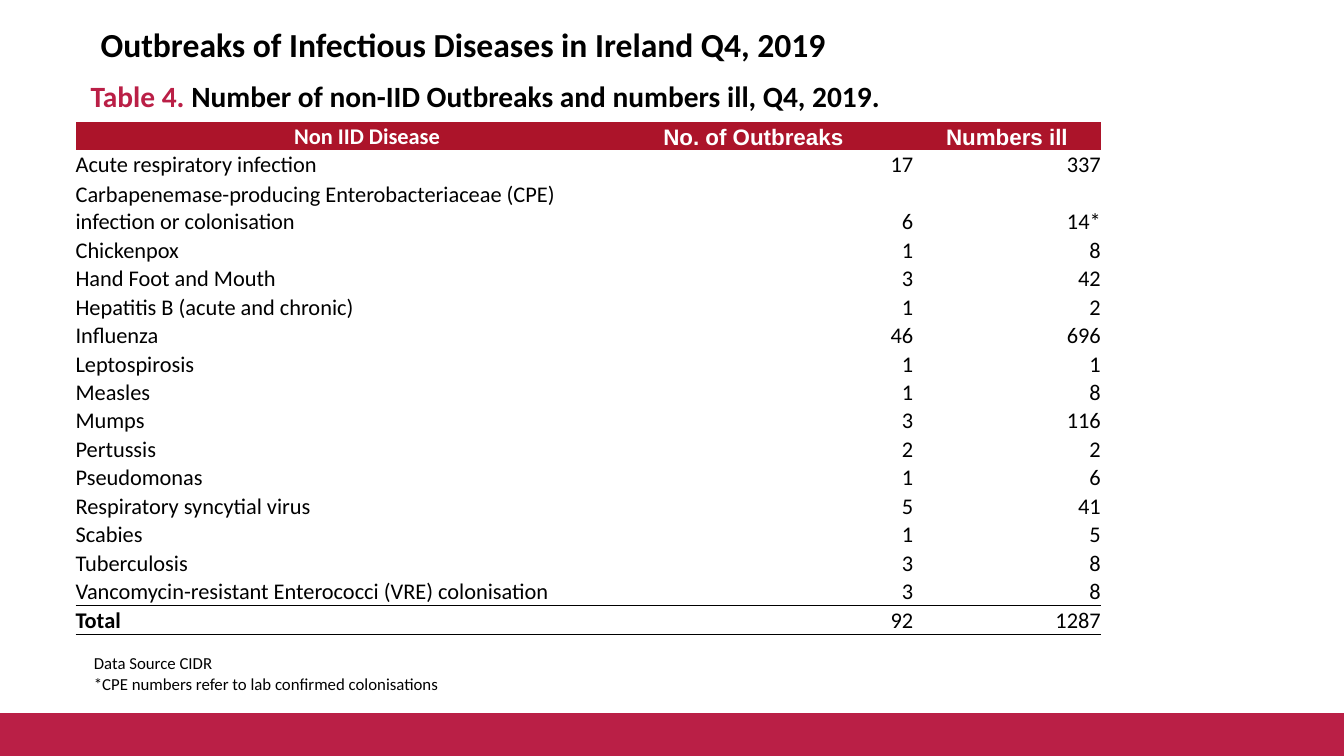
from dataclasses import dataclass

from lxml.etree import SubElement
from pptx import Presentation
from pptx.dml.color import RGBColor
from pptx.enum.shapes import MSO_SHAPE as Preset
from pptx.enum.text import MSO_ANCHOR as Anchor, PP_ALIGN as Align
from pptx.oxml.ns import qn
from pptx.util import Inches, Pt

COLORS = {"crimson": "BA1F46", "header": "AC142A", "ink": "000000", "paper": "FFFFFF"}

# Grid of 160 columns by 90 rows
presentation = Presentation()
presentation.slide_width, presentation.slide_height = Inches(13.33), Inches(7.5)
COLUMN = presentation.slide_width / 160
ROW = presentation.slide_height / 90


@dataclass
class Area:
    left: float
    top: float
    width: float
    height: float

    def lengths(self) -> tuple[int, int, int, int]:
        return (round(self.left * COLUMN), round(self.top * ROW),
                round(self.width * COLUMN), round(self.height * ROW))


@dataclass
class Span:
    text: str
    color: str = "ink"


@dataclass
class TextBlock:
    area: Area
    size: float
    bold: bool
    lines: list[list[Span]]


@dataclass
class Heading:
    text: str
    font: str
    left_gap: float = 0
    right_gap: float = 0


@dataclass
class Disease:
    name: str
    outbreaks: int
    ill: str
    height: int = 1


BAND = Area(0, 85, 160, 5)
TABLE = Area(9, 14.52, 122.04, 61.02)
TABLE_COLUMNS = (62.4, 37.32, 22.32)
LINE_ROWS = 3.39

SOURCE = TextBlock(Area(10, 77.16, 131, 8), 12, False, [
    [Span("Data Source CIDR")],
    [Span("*CPE numbers refer to lab confirmed colonisations")]])
TITLE = TextBlock(Area(10.8, 2.28, 104.2, 6), 24, True, [
    [Span("Outbreaks of Infectious Diseases in Ireland Q4, 2019")]])
CAPTION = TextBlock(Area(9.6, 8.76, 122, 9.72), 21, True, [
    [Span("Table 4. ", "crimson"),
     Span("Number of non-IID Outbreaks and numbers ill, Q4, 2019.")]])

HEADINGS = [Heading("Non IID Disease", "Calibri", left_gap=7),
            Heading("No. of Outbreaks", "Arial", right_gap=0.74),
            Heading("Numbers ill", "Arial")]
DISEASES = [
    Disease("Acute respiratory infection", 17, "337"),
    Disease("Carbapenemase-producing Enterobacteriaceae (CPE) infection or colonisation",
            6, "14*", height=2),
    Disease("Chickenpox", 1, "8"),
    Disease("Hand Foot and Mouth", 3, "42"),
    Disease("Hepatitis B (acute and chronic)", 1, "2"),
    Disease("Influenza", 46, "696"),
    Disease("Leptospirosis", 1, "1"),
    Disease("Measles", 1, "8"),
    Disease("Mumps", 3, "116"),
    Disease("Pertussis", 2, "2"),
    Disease("Pseudomonas", 1, "6"),
    Disease("Respiratory syncytial virus", 5, "41"),
    Disease("Scabies", 1, "5"),
    Disease("Tuberculosis", 3, "8"),
    Disease("Vancomycin-resistant Enterococci (VRE) colonisation", 3, "8"),
    Disease("Total", 92, "1287"),
]


def rgb(name: str) -> RGBColor:
    return RGBColor.from_string(COLORS[name])


def style(font, size: float, color: str, bold: bool, name: str = "Calibri") -> None:
    font.name, font.size, font.bold = name, Pt(size), bold
    font.color.rgb = rgb(color)


def draw_band(slide) -> None:
    shape = slide.shapes.add_shape(Preset.RECTANGLE, *BAND.lengths())
    shape.shadow.inherit = False
    shape.fill.solid()
    shape.fill.fore_color.rgb = rgb("crimson")
    shape.line.color.rgb = rgb("crimson")
    shape.line.width = Pt(2)


def draw_text(slide, block: TextBlock) -> None:
    text_frame = slide.shapes.add_textbox(*block.area.lengths()).text_frame
    text_frame.word_wrap = True
    text_frame.text = "\n".join([""] * len(block.lines))
    for paragraph, spans in zip(text_frame.paragraphs, block.lines):
        for span in spans:
            run = paragraph.add_run()
            run.text = span.text
            style(run.font, block.size, span.color, block.bold)


def set_borders(cell, ruled: str) -> None:
    """Rule the named sides (L, R, T, B) and clear the others."""
    properties = cell._tc.get_or_add_tcPr()
    for side in "LRTB":
        line = SubElement(properties, qn(f"a:ln{side}"), w=str(Pt(0.5)))
        if side in ruled:
            fill = SubElement(line, qn("a:solidFill"))
            SubElement(fill, qn("a:srgbClr"), val=COLORS["ink"])
        else:
            SubElement(line, qn("a:noFill"))


def fill_cell(cell, text: str, align: Align, ruled: str = "") -> None:
    cell.margin_left = cell.margin_right = cell.margin_top = cell.margin_bottom = 0
    cell.vertical_anchor = Anchor.BOTTOM
    set_borders(cell, ruled)
    cell.fill.background()
    cell.text_frame.text = text
    paragraph = cell.text_frame.paragraphs[0]
    paragraph.alignment = align
    style(paragraph.runs[0].font, 16, "ink", text == "Total")


def draw_table(slide) -> None:
    table = slide.shapes.add_table(
        len(DISEASES) + 1, len(HEADINGS), *TABLE.lengths()).table
    table.first_row = table.horz_banding = False
    for column, width in zip(table.columns, TABLE_COLUMNS):
        column.width = round(width * COLUMN)
    for row, lines in zip(table.rows, [1] + [disease.height for disease in DISEASES]):
        row.height = round(lines * LINE_ROWS * ROW)

    # Header row
    for cell, heading in zip(table.rows[0].cells, HEADINGS):
        fill_cell(cell, heading.text, Align.CENTER)
        cell.margin_left = round(heading.left_gap * COLUMN)
        cell.margin_right = round(heading.right_gap * COLUMN)
        cell.fill.solid()
        cell.fill.fore_color.rgb = rgb("header")
        style(cell.text_frame.paragraphs[0].runs[0].font, 16, "paper", True, heading.font)

    # Disease rows, with rules above and below the total
    rules = [""] * (len(DISEASES) - 2) + ["B", "TB"]
    for index, (disease, ruled) in enumerate(zip(DISEASES, rules), start=1):
        fill_cell(table.cell(index, 0), disease.name, Align.LEFT, ruled)
        fill_cell(table.cell(index, 1), str(disease.outbreaks), Align.RIGHT, ruled)
        fill_cell(table.cell(index, 2), disease.ill, Align.RIGHT, ruled)


def main() -> None:
    slide = presentation.slides.add_slide(presentation.slide_layouts[6])
    draw_band(slide)
    draw_text(slide, SOURCE)
    draw_text(slide, TITLE)
    draw_table(slide)
    draw_text(slide, CAPTION)
    presentation.save("out.pptx")


if __name__ == "__main__":
    main()
